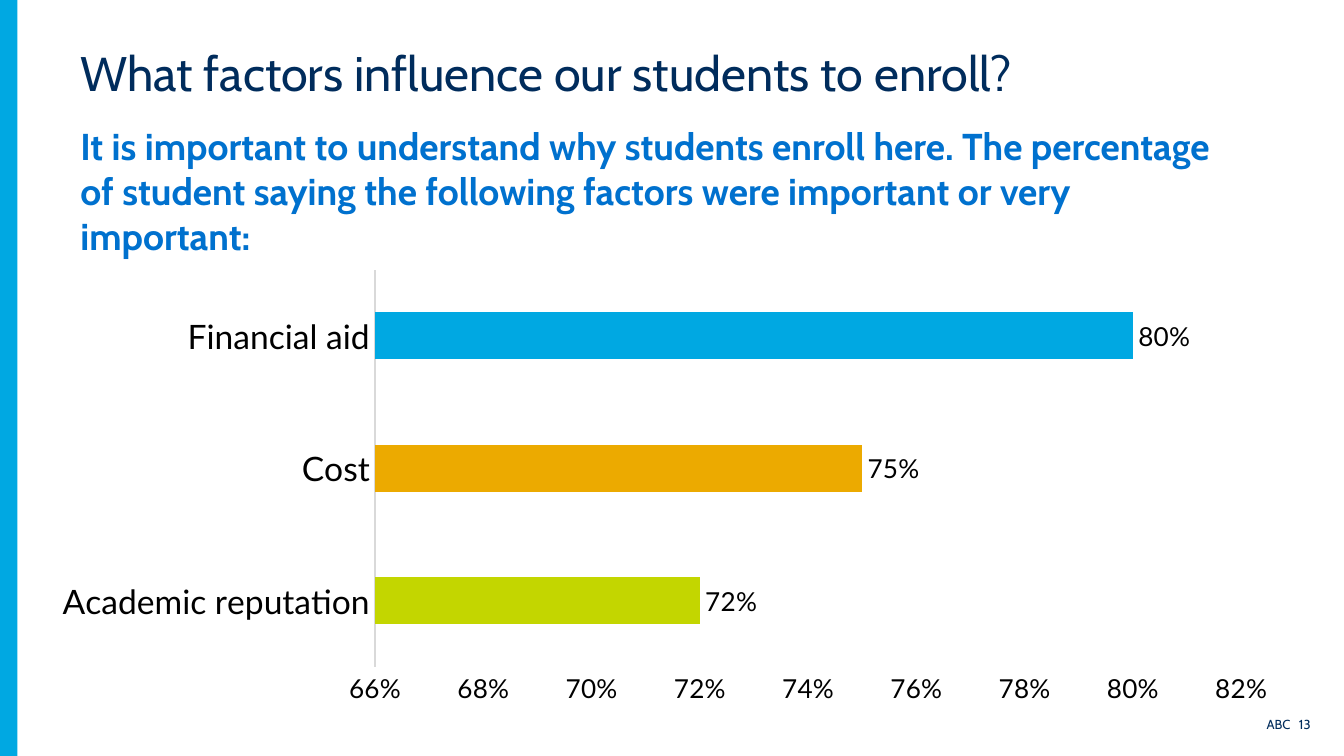
from pptx import Presentation, util as u
from pptx.chart.data import CategoryChartData
from pptx.dml.color import RGBColor
from pptx.enum import chart as ch, shapes, text
from pptx.oxml import parse_xml
from pptx.oxml.ns import nsdecls

# Content
TITLE = "What factors influence our students to enroll?"
LEAD = ("It is important to understand why students enroll here. The percentage of "
        "student saying the following factors were important or very important:")
FOOTER = ("ABC", " ", "13")
# factor, share of students, bar colour (bottom to top)
FACTORS = [("Academic reputation", 0.72, "C3D600"),
           ("Cost", 0.75, "ECAA00"),
           ("Financial aid", 0.80, "00A8E2")]
AXIS = dict(minimum_scale=0.66, maximum_scale=0.82, major_unit=0.02)

THEME = dict(head="Cabin", body="Lato", navy="002C5C", blue="0071CE", sky="00A8E2",
             black="000000", rule="D9D9D9", title=26, lead=20, category=18, value=14,
             footer=7)

# Places: left, top, width, height in inches, on a 16:9 slide
W = 10
H = W * 9 / 16
MARGIN, COLUMN = 0.05 * W, 8.66
PLACES = dict(stripe=(0, 0, 0.13, H),
              title=(MARGIN, 0.32, COLUMN, 0.85),
              lead=(MARGIN, 0.87, COLUMN, 0.46),
              chart=(0.27, 1.94, 9.34, 3.36),
              footer=(9.31, 5.28, 0.54, 0.22))
PLOT = dict(x=0.27, y=0.02, w=0.69, h=0.88)  # shares of the chart's size


def place(name):
    return [u.Inches(v) for v in PLACES[name]]


def style(font, size, color, face, bold=False):
    font.size, font.name, font.bold = u.Pt(THEME[size]), THEME[face], bold
    font.color.rgb = RGBColor.from_string(THEME[color])


def paint(fill, color):
    fill.solid()
    fill.fore_color.rgb = RGBColor.from_string(color)


def add_text(s, name, parts, color, bold=False, align=text.PP_ALIGN.LEFT):
    tf = s.shapes.add_textbox(*place(name)).text_frame
    tf.word_wrap = True
    p = tf.paragraphs[0]
    p.alignment = align
    for part in parts:
        r = p.add_run()
        r.text = part
        style(r.font, name, color, "head", bold)
    return p


def add_chart(s):
    data = CategoryChartData(number_format="0%")
    data.categories = [name for name, _, _ in FACTORS]
    data.add_series("Series 1", [share for _, share, _ in FACTORS])
    chart = s.shapes.add_chart(ch.XL_CHART_TYPE.BAR_CLUSTERED, *place("chart"), data).chart
    chart.has_legend = chart.has_title = False
    style(chart.font, "value", "black", "body")

    # Bars and labels
    plot = chart.plots[0]
    plot.gap_width, plot.vary_by_categories = 182, False
    series = plot.series[0]
    paint(series.format.fill, THEME["sky"])
    for i, (_, _, color) in enumerate(FACTORS):
        paint(series.points[i].format.fill, color)
    labels = series.data_labels
    labels.show_value = True
    labels.number_format, labels.number_format_is_linked = "0%", False
    labels.position = ch.XL_LABEL_POSITION.OUTSIDE_END
    style(labels.font, "value", "black", "body")

    # Axes
    for axis, size in ((chart.category_axis, "category"), (chart.value_axis, "value")):
        axis.has_major_gridlines = False
        axis.major_tick_mark = axis.minor_tick_mark = ch.XL_TICK_MARK.NONE
        style(axis.tick_labels.font, size, "black", "body")
    line = chart.category_axis.format.line
    line.width = u.Pt(0.75)
    line.color.rgb = RGBColor.from_string(THEME["rule"])
    values = chart.value_axis
    values.format.line.fill.background()
    values.tick_labels.number_format = "0%"
    values.tick_labels.number_format_is_linked = False
    for key, v in AXIS.items():
        setattr(values, key, v)

    # Fixed plot area
    area = chart._chartSpace.chart.plotArea
    for old in area.xpath("c:layout"):
        area.remove(old)
    modes = "".join(f'<c:{k}Mode val="edge"/>' for k in "xy")
    sizes = "".join(f'<c:{k} val="{v}"/>' for k, v in PLOT.items())
    area.insert(0, parse_xml(
        f'<c:layout {nsdecls("c")}><c:manualLayout><c:layoutTarget val="inner"/>'
        f'{modes}{sizes}</c:manualLayout></c:layout>'))


def main():
    prs = Presentation()
    prs.slide_width, prs.slide_height = u.Inches(W), u.Inches(H)
    s = prs.slides.add_slide(prs.slide_layouts[6])

    # Side stripe
    sp = s.shapes.add_shape(shapes.MSO_SHAPE.RECTANGLE, *place("stripe"))
    sp.shadow.inherit = False
    paint(sp.fill, THEME["sky"])
    sp.line.fill.background()

    # Text
    add_text(s, "lead", [LEAD], "blue", bold=True)
    add_text(s, "title", [TITLE], "navy").line_spacing = 0.9
    p = add_text(s, "footer", FOOTER, "navy", align=text.PP_ALIGN.RIGHT)
    p.runs[1].font._element.set("spc", "300")  # wider gap before the page number

    add_chart(s)
    prs.save("out.pptx")


if __name__ == "__main__":
    main()
